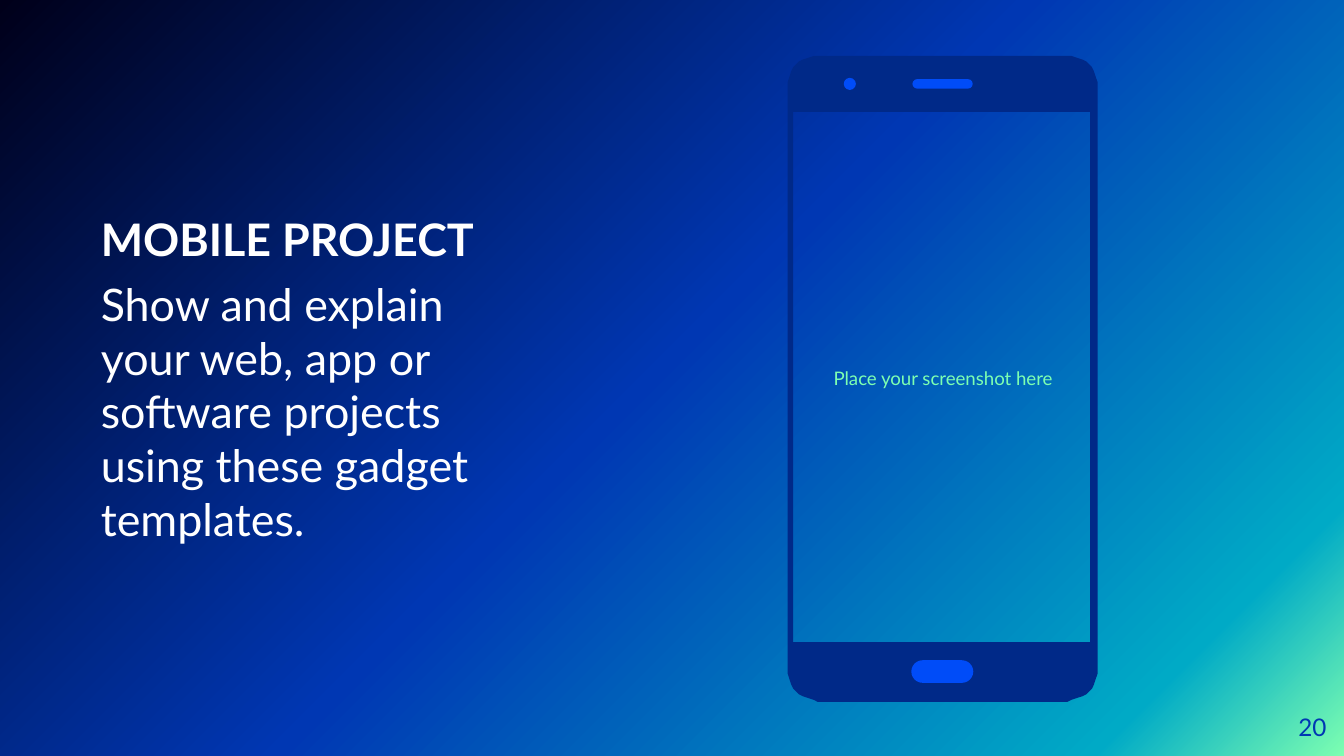
from copy import deepcopy
from math import cos, radians, sin

from pptx import Presentation
from pptx.dml.color import RGBColor
from pptx.enum.shapes import MSO_SHAPE as SHAPE
from pptx.enum.text import MSO_ANCHOR as ANCHOR, PP_ALIGN as ALIGN
from pptx.oxml.ns import qn
from pptx.util import Pt

MINT = RGBColor(0x7D, 0xFF, 0xB1)
TEAL = RGBColor(0x00, 0xAA, 0xC6)
BLUE = RGBColor(0x00, 0x37, 0xB3)
NIGHT = RGBColor(0x00, 0x00, 0x1A)
NAVY = RGBColor(0x00, 0x29, 0x88)
BRIGHT = RGBColor(0x00, 0x4C, 0xF8)
WHITE = RGBColor(0xFF, 0xFF, 0xFF)


def add_text(box, lines, size, color, align, inset=0):
    tf = s.shapes.add_textbox(*map(Pt, box)).text_frame
    tf.word_wrap = True
    tf.vertical_anchor = ANCHOR.MIDDLE
    tf.margin_left = tf.margin_right = Pt(inset)
    tf.margin_top = tf.margin_bottom = Pt(inset)
    tf.text = "\n".join(lines)
    for p in tf.paragraphs:
        p.alignment = align
        for r in p.runs:
            r.font.name = "Lato"
            r.font.size = Pt(size)
            r.font.color.rgb = color
    return tf


def paint(sp, color):
    sp.shadow.inherit = False
    sp.fill.solid()
    sp.fill.fore_color.rgb = color
    sp.line.fill.background()


prs = Presentation()
prs.slide_width, prs.slide_height = Pt(720), Pt(405)
s = prs.slides.add_slide(prs.slide_layouts[6])

# Background: four-stop diagonal gradient
fill = s.background.fill
fill.gradient()
fill.gradient_angle = 135
gs_lst = s.element.find(".//" + qn("a:gsLst"))
for _ in range(2):
    gs_lst.append(deepcopy(gs_lst[0]))
stops = [(0, MINT), (0.12, TEAL), (0.51, BLUE), (1, NIGHT)]
for stop, (position, color) in zip(fill.gradient_stops, stops):
    stop.position = position
    stop.color.rgb = color

# Texts
add_text((426, 61.9, 158.4, 281.5), ["Place your screenshot here"],
         10, MINT, ALIGN.CENTER, inset=7.2)
tf = add_text((54, 29.5, 228, 346.5),
              ["MOBILE PROJECT",
               "Show and explain your web, app or software projects "
               "using these gadget templates."],
              24, WHITE, ALIGN.LEFT)
title, body = tf.paragraphs
title.runs[0].font.bold = True
body.space_before = Pt(6)
add_text((667.4, 373.7, 43.2, 31), ["20"], 13, BLUE, ALIGN.RIGHT)

# Phone body: rounded outline with a screen opening
left, top, right, bottom, radius = 421.5, 29.5, 588.5, 375.5, 17
corners = [(right - radius, bottom - radius, 0), (left + radius, bottom - radius, 90),
           (left + radius, top + radius, 180), (right - radius, top + radius, 270)]
outline = [(cx + radius * cos(radians(start + step)), cy + radius * sin(radians(start + step)))
           for cx, cy, start in corners for step in range(0, 91, 10)]
screen = [(425.3, 60.5), (425.3, 344), (584.5, 344), (584.5, 60.5)]
fb = s.shapes.build_freeform(*outline[0], scale=Pt(1))
fb.add_line_segments(outline[1:], close=True)
fb.move_to(*screen[0])
fb.add_line_segments(screen[1:], close=True)
paint(fb.convert_to_shape(), NAVY)

# Home button, camera and speaker
for kind, box in [(SHAPE.ROUNDED_RECTANGLE, (488.2, 353.7, 33.2, 12.1)),
                  (SHAPE.OVAL, (452, 41.7, 6.5, 6.5)),
                  (SHAPE.ROUNDED_RECTANGLE, (488.8, 42.4, 32.3, 5.1))]:
    sp = s.shapes.add_shape(kind, *map(Pt, box))
    paint(sp, BRIGHT)
    if kind == SHAPE.ROUNDED_RECTANGLE:
        sp.adjustments[0] = 0.5

prs.save("out.pptx")
